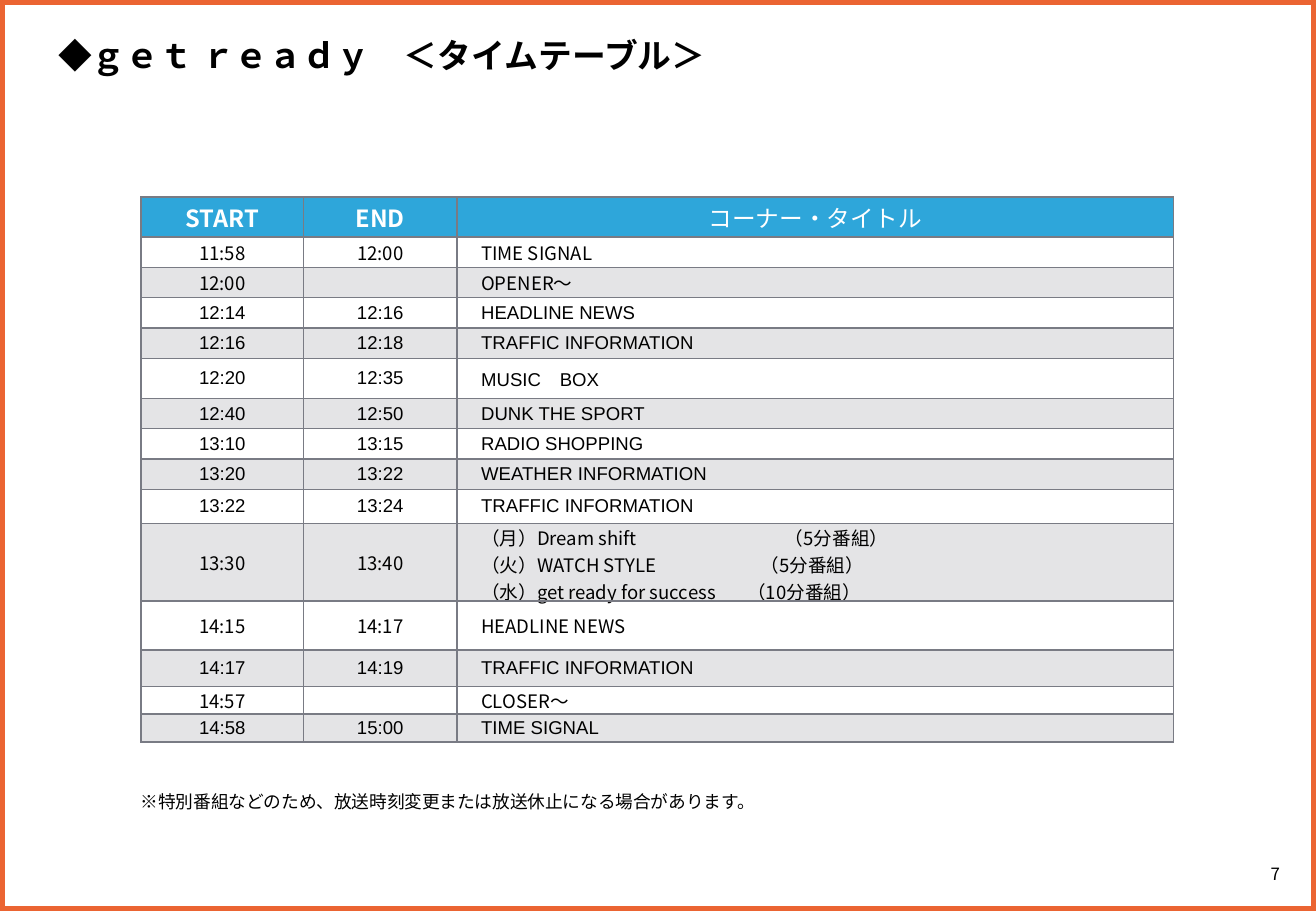
from lxml import etree
from pptx import Presentation
from pptx.dml.color import RGBColor
from pptx.enum.shapes import MSO_SHAPE
from pptx.enum.text import MSO_ANCHOR, PP_ALIGN
from pptx.oxml.ns import qn
from pptx.util import Inches, Pt

LEFT, CENTER = PP_ALIGN.LEFT, PP_ALIGN.CENTER
TOP, MIDDLE = MSO_ANCHOR.TOP, MSO_ANCHOR.MIDDLE
RECTANGLE = MSO_SHAPE.RECTANGLE

COLORS = {
    "frame": "EB6432",
    "header": "2EA6DA",
    "gray": "797B84",
    "text": "000000",
    "white": "FFFFFF",
}
NOTO, ARIAL = "Noto Sans CJK JP", "Arial"

TITLE_MARK = "◆"
TITLE = "ｇｅｔ ｒｅａｄｙ　＜タイムテーブル＞"
NOTE = "※特別番組などのため、放送時刻変更または放送休止になる場合があります。"
PAGE_NUMBER = "7"

HEADINGS = [("START", NOTO, True), ("END", NOTO, True), ("コーナー・タイトル", ARIAL, False)]
HEADING_HEIGHT = 0.33
COLUMN_WIDTHS = [1.34, 1.26, 5.9]
PROGRAMS = [
    ("11:58", "12:00", "TIME SIGNAL", NOTO, 0.25),
    ("12:00", "", "OPENER〜", NOTO, 0.25),
    ("12:14", "12:16", "HEADLINE NEWS", ARIAL, 0.25),
    ("12:16", "12:18", "TRAFFIC INFORMATION", ARIAL, 0.25),
    ("12:20", "12:35", "MUSIC　BOX", ARIAL, 0.33),
    ("12:40", "12:50", "DUNK THE SPORT", ARIAL, 0.25),
    ("13:10", "13:15", "RADIO SHOPPING", ARIAL, 0.25),
    ("13:20", "13:22", "WEATHER INFORMATION", ARIAL, 0.25),
    ("13:22", "13:24", "TRAFFIC INFORMATION", ARIAL, 0.28),
    ("13:30", "13:40",
     "（月）Dream shift\t（5分番組）\n"
     "（火）WATCH STYLE\t（5分番組）\n"
     "（水）get ready for success\t（10分番組）", NOTO, 0.64),
    ("14:15", "14:17", "HEADLINE NEWS", NOTO, 0.4),
    ("14:17", "14:19", "TRAFFIC INFORMATION", ARIAL, 0.3),
    ("14:57", "", "CLOSER〜", NOTO, 0.23),
    ("14:58", "15:00", "TIME SIGNAL", ARIAL, 0.23),
]
DURATION_TABS = [2.5, 2.3, 2.19]
TITLE_INDENT = 0.2


def write(frame, text, size=11, font=NOTO, color="text", bold=False, align=LEFT, tabs=()):
    for index, line in enumerate(text.split("\n")):
        paragraph = frame.paragraphs[0] if index == 0 else frame.add_paragraph()
        paragraph.alignment = align
        if not line:
            etree.SubElement(paragraph._p, qn("a:endParaRPr"), sz=str(size * 100))
            continue
        if "\t" in line:
            stops = etree.SubElement(paragraph._p.get_or_add_pPr(), qn("a:tabLst"))
            etree.SubElement(stops, qn("a:tab"), pos=str(Inches(tabs[index])), algn="l")
        add_run(paragraph, line, size, font, color, bold)


def add_run(paragraph, text, size, font, color, bold):
    run = paragraph.add_run()
    run.text = text
    run.font.size = Pt(size)
    run.font.bold = bold
    run.font.color.rgb = RGBColor.from_string(COLORS[color])
    run.font.name = font
    etree.SubElement(run._r.get_or_add_rPr(), qn("a:ea"), typeface=NOTO)


def add_text_frame(slide, left, top, width, height, anchor=TOP):
    frame = slide.shapes.add_textbox(*map(Inches, (left, top, width, height))).text_frame
    frame.word_wrap = True
    frame.vertical_anchor = anchor
    frame.margin_top = frame.margin_bottom = 0
    return frame


def style_cell(cell, fill=None, alpha=None, indent=0):
    cell.vertical_anchor = MIDDLE
    cell.margin_left = Inches(indent)
    cell.margin_right = cell.margin_top = cell.margin_bottom = 0
    properties = cell._tc.get_or_add_tcPr()
    for side in ("lnL", "lnR", "lnT", "lnB"):
        border = etree.SubElement(properties, qn(f"a:{side}"), w=str(Pt(1)))
        solid = etree.SubElement(border, qn("a:solidFill"))
        etree.SubElement(solid, qn("a:srgbClr"), val=COLORS["gray"])
    if fill is None:
        cell.fill.background()
        return
    cell.fill.solid()
    cell.fill.fore_color.rgb = RGBColor.from_string(COLORS[fill])
    if alpha:
        tint = properties.find(qn("a:solidFill")).find(qn("a:srgbClr"))
        etree.SubElement(tint, qn("a:alpha"), val=str(alpha * 1000))


def add_timetable(slide):
    heights = [HEADING_HEIGHT] + [program[-1] for program in PROGRAMS]
    timetable = slide.shapes.add_table(
        len(heights), len(COLUMN_WIDTHS), Inches(1.16), Inches(1.62),
        Inches(sum(COLUMN_WIDTHS)), Inches(sum(heights))).table
    timetable.horz_banding = False
    for column, width in zip(timetable.columns, COLUMN_WIDTHS):
        column.width = Inches(width)
    for row, height in zip(timetable.rows, heights):
        row.height = Inches(height)
    for column, (heading, font, bold) in enumerate(HEADINGS):
        cell = timetable.cell(0, column)
        style_cell(cell, fill="header")
        write(cell.text_frame, heading, size=14, font=font, color="white", bold=bold, align=CENTER)
    for row, (start, end, title, font, _) in enumerate(PROGRAMS, 1):
        shade = {"fill": "gray", "alpha": 20} if row % 2 == 0 else {}
        for column, text in enumerate((start, end, title)):
            is_title = column == 2
            cell = timetable.cell(row, column)
            style_cell(cell, indent=TITLE_INDENT if is_title else 0, **shade)
            write(cell.text_frame, text, font=font,
                  align=LEFT if is_title else CENTER, tabs=DURATION_TABS)


def main():
    deck = Presentation()
    deck.slide_width, deck.slide_height = Inches(10.83), Inches(7.5)
    slide = deck.slides.add_slide(deck.slide_layouts[6])

    frame = slide.shapes.add_shape(RECTANGLE, 0, 0, deck.slide_width, deck.slide_height)
    frame.shadow.inherit = False
    frame.fill.background()
    frame.line.color.rgb = RGBColor.from_string(COLORS["frame"])
    frame.line.width = Pt(6)

    write(add_text_frame(slide, 10.16, 7.02, 0.67, 0.35, MIDDLE), PAGE_NUMBER, size=10, align=CENTER)
    heading = add_text_frame(slide, 0.38, 0.29, 6.22, 0.44)
    write(heading, TITLE_MARK, size=20)
    add_run(heading.paragraphs[0], TITLE, 20, NOTO, "text", True)
    add_timetable(slide)
    write(add_text_frame(slide, 1.06, 6.51, 8.62, 0.28), NOTE, size=10.5)
    deck.save("out.pptx")


if __name__ == "__main__":
    main()
